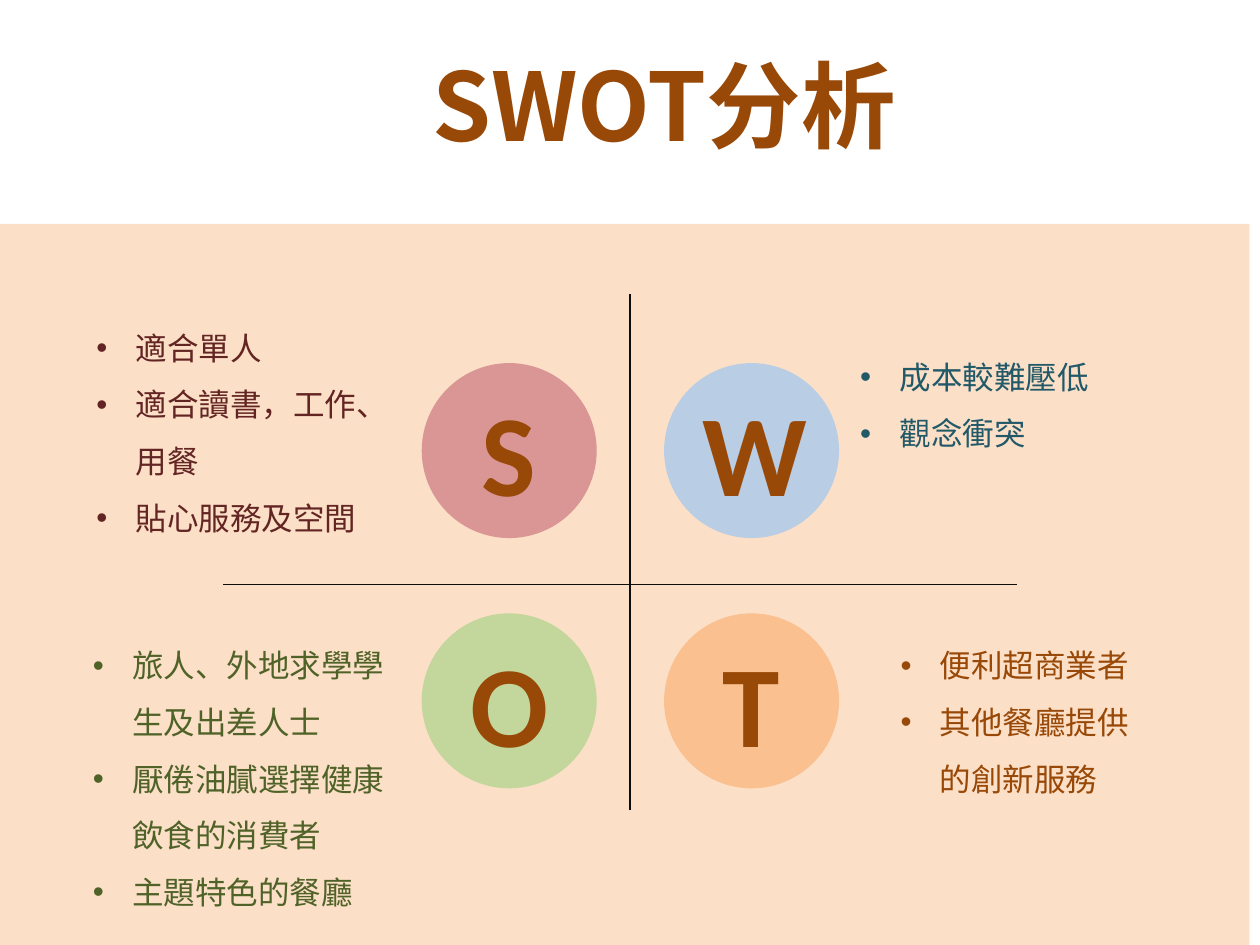
from lxml import etree
from pptx import Presentation
from pptx.dml.color import RGBColor
from pptx.enum import shapes, text
from pptx.oxml.ns import qn
from pptx.util import Pt

BROWN = RGBColor(0x98, 0x48, 0x07)
MAROON = RGBColor(0x63, 0x25, 0x23)
TEAL = RGBColor(0x21, 0x59, 0x68)
OLIVE = RGBColor(0x4F, 0x62, 0x28)
PINK = RGBColor(0xD9, 0x96, 0x94)
BLUE = RGBColor(0xB9, 0xCD, 0xE5)
GREEN = RGBColor(0xC3, 0xD6, 0x9B)
ORANGE = RGBColor(0xFA, 0xC0, 0x90)
INK = RGBColor(0x0D, 0x0D, 0x0D)
CJK = "Noto Sans CJK SC"

CIRCLE = 100
LEFT, RIGHT = 241, 379.5
TOP, BOTTOM = 207.5, 350.5

# letter, circle colour, circle left and top, list box, list colour, points
QUADRANTS = [
    ("S", PINK, LEFT, TOP, (48, 173.5, 193, 138), MAROON,
     ["適合單人", "適合讀書，工作、用餐", "貼心服務及空間"]),
    ("W", BLUE, RIGHT, TOP, (484.5, 190, 249, 73), TEAL,
     ["成本較難壓低", "觀念衝突"]),
    ("O", GREEN, LEFT, BOTTOM, (46, 355, 198.5, 171), OLIVE,
     ["旅人、外地求學學生及出差人士", "厭倦油膩選擇健康飲食的消費者", "主題特色的餐廳"]),
    ("T", ORANGE, RIGHT, BOTTOM, (507.5, 355, 153.5, 105), BROWN,
     ["便利超商業者", "其他餐廳提供的創新服務"]),
]


def add_bullet(para, indent=22.5):
    props = para._p.get_or_add_pPr()
    props.set("marL", str(Pt(indent)))
    props.set("indent", str(-Pt(indent)))
    etree.SubElement(props, qn("a:buFont")).set("typeface", "Arial")
    etree.SubElement(props, qn("a:buChar")).set("char", "•")


def write(shape, lines, *, size, color, font=CJK, bold=False, align=None,
          anchor=text.MSO_ANCHOR.TOP, spacing=None, bullets=False):
    frame = shape.text_frame
    frame.word_wrap = True
    frame.auto_size = text.MSO_AUTO_SIZE.NONE
    frame.vertical_anchor = anchor
    for number, line in enumerate(lines):
        para = frame.add_paragraph() if number else frame.paragraphs[0]
        para.alignment = align
        para.line_spacing = spacing
        para.space_before = Pt(0)
        if bullets:
            add_bullet(para)
        span = para.add_run()
        span.text = line
        span.font.name = font
        span.font.size = Pt(size)
        span.font.bold = bold
        span.font.color.rgb = color
        east_asian = etree.SubElement(span.font._element, qn("a:ea"))
        east_asian.set("typeface", font)


def add_title(page, wording):
    title = page.shapes.title
    title.left, title.top, title.width, title.height = map(Pt, (195, 23, 369, 73))
    write(title, [wording], size=54, color=BROWN, bold=True,
          align=text.PP_ALIGN.CENTER)


def add_filled(page, kind, place, color, opacity=None):
    shape = page.shapes.add_shape(kind, *map(Pt, place))
    shape.shadow.inherit = False
    shape.fill.solid()
    shape.fill.fore_color.rgb = color
    shape.line.fill.background()
    if opacity is not None:
        tint = shape._element.spPr.find(".//" + qn("a:srgbClr"))
        etree.SubElement(tint, qn("a:alpha")).set("val", str(opacity * 1000))
    return shape


def add_axis(page, *ends):
    axis = page.shapes.add_connector(shapes.MSO_CONNECTOR.STRAIGHT, *map(Pt, ends))
    axis.line.color.rgb = INK
    axis.line.width = Pt(0.75)
    etree.SubElement(axis._element.spPr, qn("a:effectLst"))


def add_quadrant(page, letter, fill, left, top, place, color, points):
    circle = add_filled(page, shapes.MSO_SHAPE.OVAL,
                        (left, top, CIRCLE, CIRCLE), fill)
    write(circle, [letter], size=66, color=BROWN, font="Calibri", bold=True,
          align=text.PP_ALIGN.CENTER, anchor=text.MSO_ANCHOR.MIDDLE)
    box = page.shapes.add_textbox(*map(Pt, place))
    write(box, points, size=18, color=color, spacing=1.5, bullets=True)


def main():
    deck = Presentation()
    deck.slide_width, deck.slide_height = Pt(720), Pt(540)
    page = deck.slides.add_slide(deck.slide_layouts[5])
    add_title(page, "SWOT分析")
    add_filled(page, shapes.MSO_SHAPE.RECTANGLE, (-6, 128, 720, 412), ORANGE,
               opacity=50)
    add_axis(page, 127.5, 334, 581, 334)
    add_axis(page, 360, 168, 360, 463)
    for quadrant in QUADRANTS:
        add_quadrant(page, *quadrant)
    deck.save("out.pptx")


if __name__ == "__main__":
    main()
